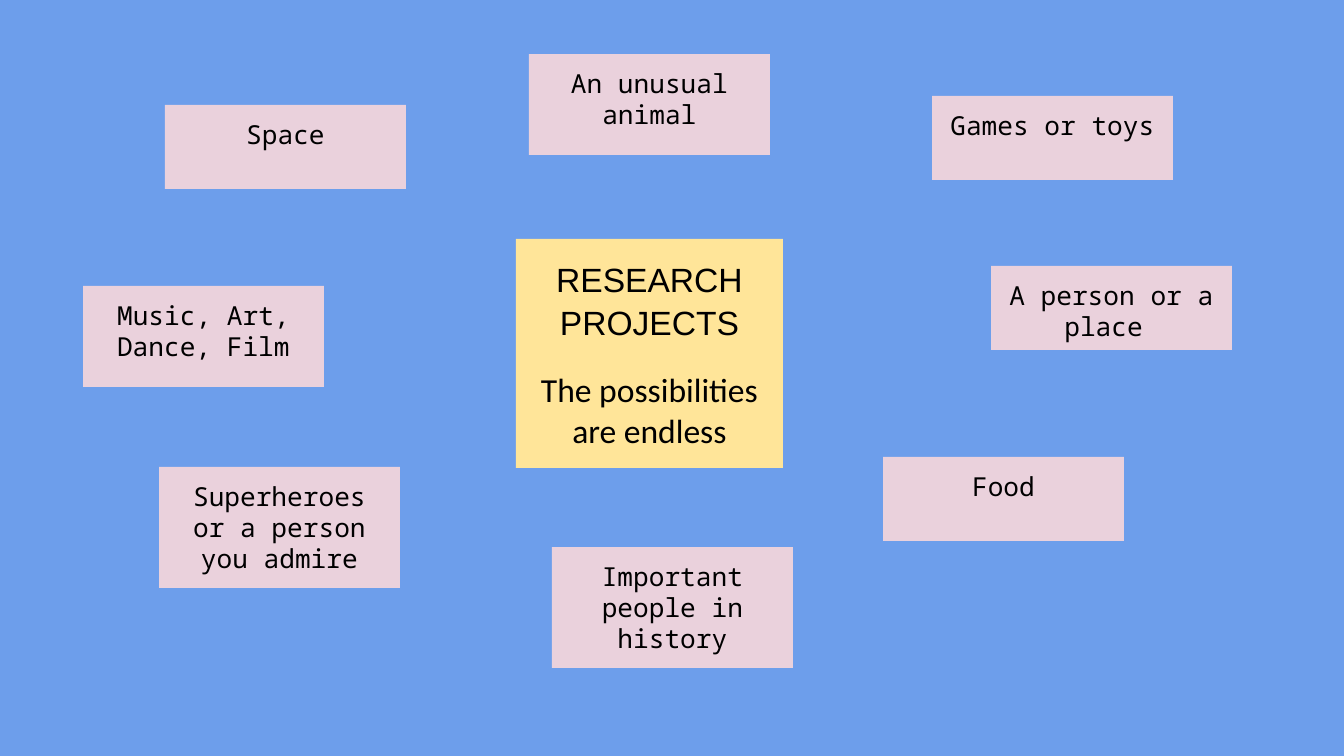
from pptx import Presentation
from pptx.dml.color import RGBColor
from pptx.enum.shapes import MSO_SHAPE as Shape
from pptx.enum.text import MSO_ANCHOR as Anchor, PP_ALIGN as Align
from pptx.util import Pt

PX = 914400 / 134.4
BLUE = RGBColor(0x6D, 0x9E, 0xEB)
YELLOW = RGBColor(0xFF, 0xE5, 0x99)
PINK = RGBColor(0xEA, 0xD1, 0xDC)
BLACK = RGBColor(0, 0, 0)

PAGE_WIDTH, PAGE_HEIGHT = 1344, 756
INSET = 13
TOPIC_WIDTH = 241
TOPICS = [
    ("Space", 165, 105, 84),
    ("An unusual animal", 529, 54, 101),
    ("Superheroes or a person you admire", 159, 467, 121),
    ("Important people in history", 552, 547, 121),
    ("Food", 883, 457, 84),
    ("A person or a place ", 991, 266, 84),
    ("Games or toys", 932, 96, 84),
    ("Music, Art, Dance, Film", 83, 286, 101),
]


def emu(px):
    return round(px * PX)


def add_card(page, box, fill, anchor=Anchor.TOP):
    card = page.shapes.add_shape(Shape.RECTANGLE, *map(emu, box))
    card.shadow.inherit = False
    card.fill.solid()
    card.fill.fore_color.rgb = fill
    card.line.fill.background()
    frame = card.text_frame
    frame.word_wrap = True
    frame.vertical_anchor = anchor
    frame.margin_left = frame.margin_right = emu(INSET)
    frame.margin_top = frame.margin_bottom = emu(INSET)
    return frame


def write_text(para, text, font, size, color=BLACK, before=0, spacing=1.0):
    para.alignment = Align.CENTER
    para.space_before = Pt(before)
    para.line_spacing = spacing
    span = para.add_run()
    span.text = text
    span.font.name = font
    span.font.size = Pt(size)
    span.font.color.rgb = color


def add_center(page, box):
    frame = add_card(page, box, YELLOW, Anchor.MIDDLE)
    write_text(frame.paragraphs[0], "RESEARCH PROJECTS", font="Arial", size=18, spacing=1.06)
    write_text(frame.add_paragraph(), "The possibilities are endless",
               font="Calibri", size=18, before=14.5)


def add_topic(page, box, text):
    frame = add_card(page, box, PINK)
    write_text(frame.paragraphs[0], text, font="Noto Sans Mono", size=14)


def main():
    deck = Presentation()
    deck.slide_width, deck.slide_height = emu(PAGE_WIDTH), emu(PAGE_HEIGHT)
    page = deck.slides.add_slide(deck.slide_layouts[6])
    page.background.fill.solid()
    page.background.fill.fore_color.rgb = BLUE
    add_center(page, (516, 239, 267, 229))
    for text, left, top, height in TOPICS:
        add_topic(page, (left, top, TOPIC_WIDTH, height), text)
    deck.save("out.pptx")


if __name__ == "__main__":
    main()
